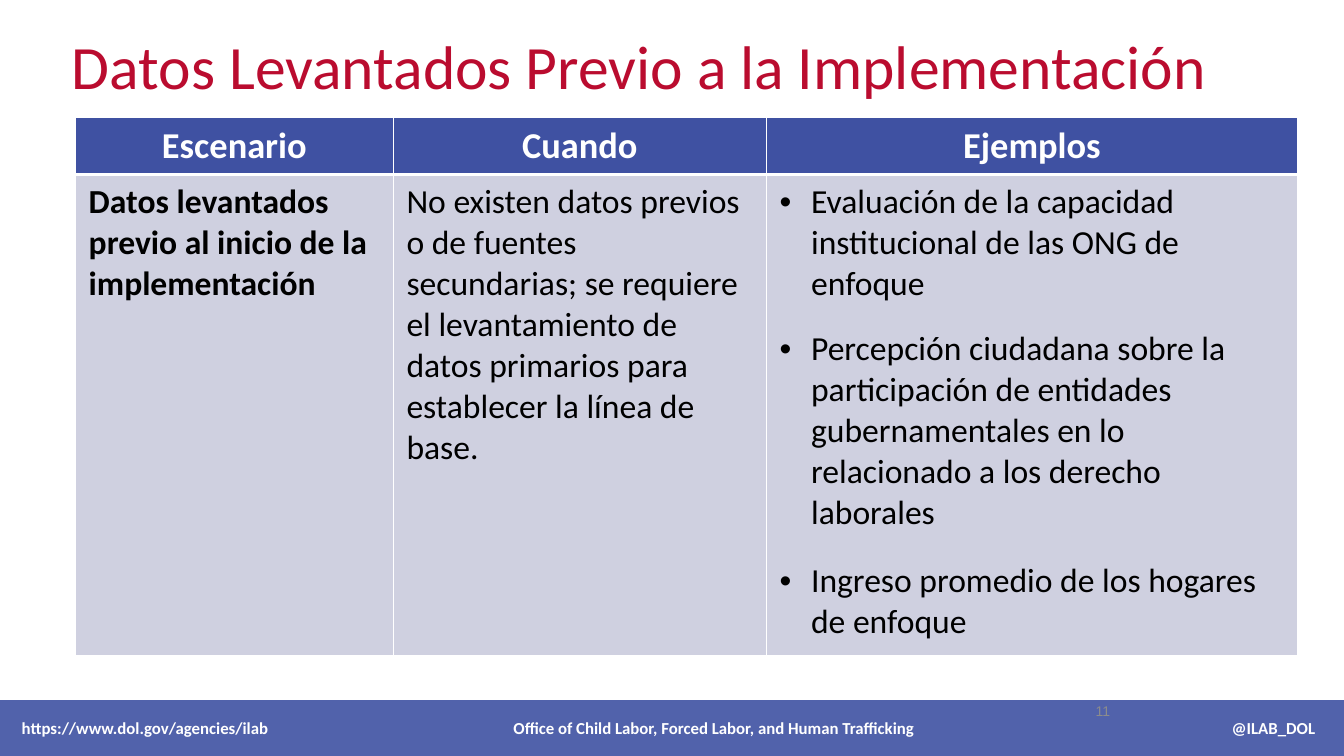
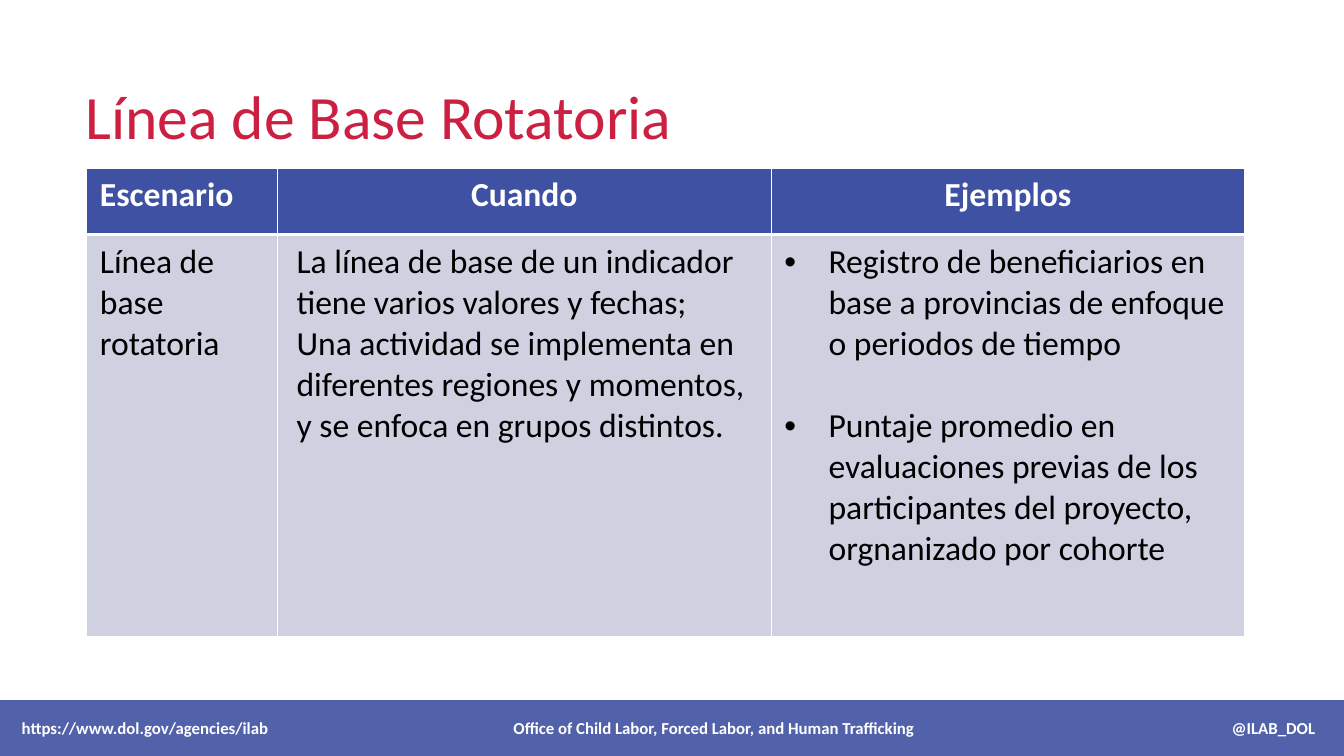
from dataclasses import dataclass

from lxml.etree import SubElement as sub
from pptx import Presentation
from pptx.dml.color import RGBColor
from pptx.enum.shapes import MSO_SHAPE as SHAPE
from pptx.enum.text import MSO_ANCHOR as ANCHOR, PP_ALIGN as ALIGN
from pptx.oxml.ns import qn
from pptx.util import Pt

# Shared look
WHITE = RGBColor(0xFF, 0xFF, 0xFF)
BLACK = RGBColor(0x00, 0x00, 0x00)
BLUE = RGBColor(0x3F, 0x51, 0xA2)
PALE = RGBColor(0xCF, 0xD0, 0xE0)
CRIMSON = RGBColor(0xBA, 0x0C, 0x2F)
RED = RGBColor(0xCB, 0x20, 0x42)
GRAY = RGBColor(0x8C, 0x8C, 0x8C)
FONT = "Calibri"
PAGE_W, PAGE_H = 960, 540
BAND = (0, 500, PAGE_W, 40)
BAND_INSET = 15.5
BAND_TABS = (("ctr", 510), ("r", 939.5))
BAND_TEXTS = ("https://www.dol.gov/agencies/ilab",
              "Office of Child Labor, Forced Labor, and Human Trafficking",
              "@ILAB_DOL")
CELL_FORMAT = {"margin_left": Pt(9.4), "margin_right": Pt(9.4),
               "margin_top": Pt(5), "margin_bottom": Pt(5)}
HEADINGS = ("Escenario", "Cuando", "Ejemplos")


@dataclass
class Item:
    """One paragraph of a table cell, lengths in points."""
    text: str
    size: float = 24
    color: RGBColor = BLACK
    bold: bool = False
    align: ALIGN = ALIGN.LEFT
    gap: float = 0
    indent: float = 0
    bullet: bool = False


def apply(target, values):
    for name, value in values.items():
        setattr(target, name, value)


def write(para, text, size, color, bold=False, font=FONT):
    span = para.add_run()
    span.text = text
    apply(span.font, {"name": font, "size": Pt(size), "bold": bold})
    span.font.color.rgb = color


def add_text(page, box, text, size, color, font=FONT, align=ALIGN.LEFT,
             anchor=ANCHOR.MIDDLE, inset=7.2, line_spacing=None):
    frame = page.shapes.add_textbox(*map(Pt, box)).text_frame
    apply(frame, {"word_wrap": True, "vertical_anchor": anchor,
                  "margin_left": Pt(inset), "margin_right": Pt(inset)})
    para = frame.paragraphs[0]
    apply(para, {"alignment": align, "line_spacing": line_spacing})
    write(para, text, size, color, font=font)


def add_footer(page, box):
    band = page.shapes.add_shape(SHAPE.RECTANGLE, *map(Pt, box))
    band.shadow.inherit = False
    band.line.fill.background()
    band.fill.solid()
    band.fill.fore_color.rgb = BLUE
    color = next(band.fill._xPr.iter(qn("a:srgbClr")))
    sub(color, qn("a:alpha"), val="90000")
    # Left, centred and right texts on one line
    apply(band.text_frame, {"margin_left": Pt(BAND_INSET), "margin_right": Pt(0),
                            "word_wrap": True, "vertical_anchor": ANCHOR.MIDDLE})
    para = band.text_frame.paragraphs[0]
    para.alignment = ALIGN.LEFT
    stops = sub(para._p.get_or_add_pPr(), qn("a:tabLst"))
    for kind, x in BAND_TABS:
        sub(stops, qn("a:tab"), pos=str(int(Pt(x - BAND_INSET))), algn=kind)
    write(para, "\t".join(BAND_TEXTS), 12, WHITE, bold=True)


def set_borders(cell, widths):
    for side, width in zip("LRTB", widths):
        line = sub(cell._tc.get_or_add_tcPr(), qn(f"a:ln{side}"), w=str(int(Pt(width))))
        sub(sub(line, qn("a:solidFill")), qn("a:srgbClr"), val=str(WHITE))


def fill_cell(cell, items, color, borders):
    apply(cell, CELL_FORMAT)
    set_borders(cell, borders)
    cell.fill.solid()
    cell.fill.fore_color.rgb = color
    for number, item in enumerate(items):
        frame = cell.text_frame
        para = frame.add_paragraph() if number else frame.paragraphs[0]
        apply(para, {"alignment": item.align, "space_before": Pt(item.gap)})
        props = para._p.get_or_add_pPr()
        props.set("marL", str(int(Pt(item.indent))))
        props.set("indent", str(int(Pt(-item.indent if item.bullet else 0))))
        if item.bullet:
            sub(props, qn("a:buFont"), typeface="Arial")
            sub(props, qn("a:buChar"), char="•")
        write(para, item.text, item.size, item.color, item.bold)


def add_scenario_table(page, origin, widths, heights, header, body):
    table = page.shapes.add_table(2, len(widths), *map(Pt, origin),
                                  Pt(sum(widths)), Pt(sum(heights))).table
    table.horz_banding = False
    for column, width in zip(table.columns, widths):
        column.width = Pt(width)
    for row, height in zip(table.rows, heights):
        row.height = Pt(height)
    for index, (heading, items) in enumerate(zip(header, body)):
        fill_cell(table.cell(0, index), [heading], BLUE, (1, 1, 1, 3))
        fill_cell(table.cell(1, index), items, PALE, (1, 1, 3, 1))


def header_items(size, first_align=ALIGN.CENTER):
    aligns = (first_align, ALIGN.CENTER, ALIGN.CENTER)
    return [Item(text, size, WHITE, True, align) for text, align in zip(HEADINGS, aligns)]


def build_prior_data(page):
    add_text(page, (42, 14, 900, 62.5), "Datos Levantados Previo a la Implementación",
             44, CRIMSON, anchor=ANCHOR.BOTTOM, inset=9.4)
    bullet = {"indent": 22.5, "bullet": True}
    add_scenario_table(page, (54, 83.5), (227, 266.5, 379.5), (41, 343.5), header_items(26), [
        [Item("Datos levantados previo al inicio de la implementación", bold=True)],
        [Item("No existen datos previos o de fuentes secundarias; se requiere el "
              "levantamiento de datos primarios para establecer la línea de base.")],
        [Item("Evaluación de la capacidad institucional de las ONG de enfoque", **bullet),
         Item("Percepción ciudadana sobre la participación de entidades gubernamentales "
              "en lo relacionado a los derecho laborales", gap=17, **bullet),
         Item("Ingreso promedio de los hogares de enfoque", gap=19.5, **bullet)],
    ])
    add_footer(page, BAND)
    add_text(page, (775.5, 493, 35.5, 29), "11", 10, GRAY, font="Arial", align=ALIGN.JUSTIFY)


def build_rolling_baseline(page):
    add_text(page, (54, 33, 828, 104.5), "Línea de Base Rotatoria", 44, RED, line_spacing=0.9)
    bullet = {"indent": 31.5, "bullet": True}
    add_scenario_table(page, (62, 120), (136, 353, 338), (47.5, 287.5),
                       header_items(24, ALIGN.LEFT), [
        [Item("Línea de base rotatoria")],
        [Item("La línea de base de un indicador tiene varios valores y fechas;", indent=4.5),
         Item("Una actividad se implementa en diferentes regiones y momentos, "
              "y se enfoca en grupos distintos.", indent=4.5)],
        [Item("Registro de beneficiarios en base a provincias de enfoque o periodos de tiempo",
              **bullet),
         Item("Puntaje promedio en evaluaciones previas de los participantes del proyecto, "
              "orgnanizado por cohorte", gap=29.5, **bullet)],
    ])
    add_footer(page, BAND)


def main():
    deck = Presentation()
    apply(deck, {"slide_width": Pt(PAGE_W), "slide_height": Pt(PAGE_H)})
    for build in (build_prior_data, build_rolling_baseline):
        build(deck.slides.add_slide(deck.slide_layouts[6]))
    deck.save("out.pptx")


if __name__ == "__main__":
    main()
